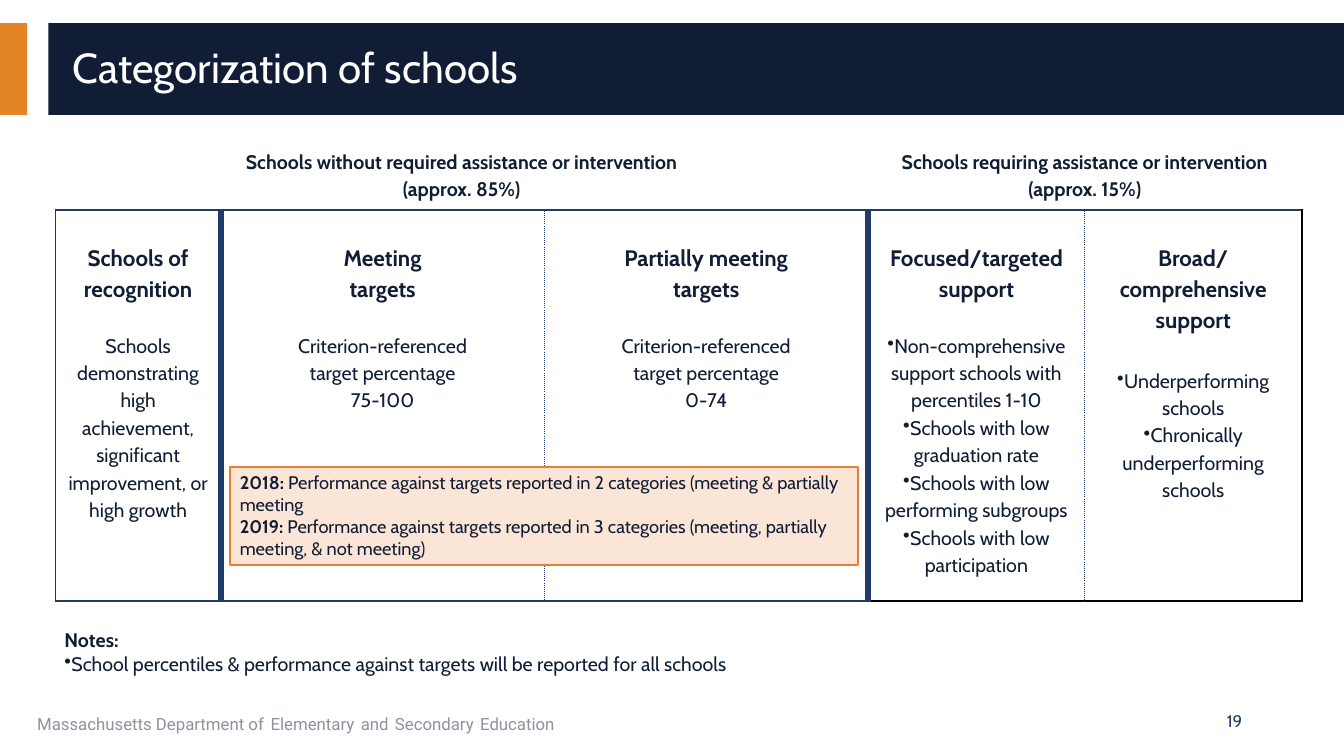
from lxml.etree import SubElement
from pptx import Presentation
from pptx.dml.color import RGBColor
from pptx.enum.shapes import MSO_SHAPE
from pptx.enum.text import MSO_ANCHOR, MSO_AUTO_SIZE, PP_ALIGN
from pptx.oxml.ns import qn
from pptx.util import Inches, Pt

NAVY, BLUE, BLACK = "101D35", "203B6A", "000000"


def write(frame, text, paragraph=None, size=14, bold=False, color=NAVY, font="Cabin",
          align=PP_ALIGN.LEFT, spacing=1.0, before=0, bullet=False):
    """Add text as a new paragraph, or as a further run of the given one."""
    if paragraph is None:
        first = frame.paragraphs[0]
        paragraph = frame.add_paragraph() if first.runs else first
        properties = paragraph._p.get_or_add_pPr()
        if bullet:
            properties.set("marL", "0")
            properties.set("indent", "0")
            SubElement(properties, qn("a:buChar"), char="•")
        paragraph.alignment = align
        paragraph.line_spacing = spacing
        paragraph.space_before = Pt(before)
    run = paragraph.add_run()
    run.text = text
    run.font.name = font
    run.font.size = Pt(size)
    run.font.bold = bold
    run.font.color.rgb = RGBColor.from_string(color)
    return paragraph


def set_border(cell, side, color, width, dash="solid"):
    line = SubElement(cell._tc.get_or_add_tcPr(), qn(f"a:ln{side}"), w=str(Pt(width)))
    fill = SubElement(line, qn("a:solidFill"))
    SubElement(fill, qn("a:srgbClr"), val=color)
    SubElement(line, qn("a:prstDash"), val=dash)


presentation = Presentation()
presentation.slide_width = Inches(13.33)
presentation.slide_height = Inches(7.5)
slide = presentation.slides.add_slide(presentation.slide_layouts[5])
shapes = slide.shapes

# Title band
title = shapes.title
for left, width, color in [(0, 0.27, "E38526"), (0.48, 12.85, NAVY)]:
    band = shapes.add_shape(MSO_SHAPE.RECTANGLE, Inches(left), Inches(0.23),
                            Inches(width), Inches(0.91))
    band.shadow.inherit = False
    band.fill.solid()
    band.fill.fore_color.rgb = RGBColor.from_string(color)
    band.line.fill.background()
    title._element.addprevious(band._element)

title.left, title.top = Inches(0.62), Inches(0.32)
title.width, title.height = Inches(12.44), Inches(0.74)
title.text_frame.auto_size = MSO_AUTO_SIZE.NONE
title.text_frame.vertical_anchor = MSO_ANCHOR.MIDDLE
write(title.text_frame, "Categorization of schools", size=30, color="FFFFFF", spacing=0.9)

# Table of categories
table = shapes.add_table(2, 5, Inches(0.55), Inches(1.38), Inches(12.36), Inches(4.58)).table
table.first_row = False
table.horz_banding = False
for column, width in zip(table.columns, [1.64, 3.21, 3.21, 2.15, 2.15]):
    column.width = Inches(width)
for row, height in zip(table.rows, [0.7, 3.88]):
    row.height = Inches(height)

centred = {"align": PP_ALIGN.CENTER, "spacing": 1.15}
groups = [
    (0, 2, ["Schools without required assistance or intervention", "(approx. 85%)"]),
    (3, 4, ["Schools requiring assistance or intervention (approx. 15%)"]),
]
for first, last, lines in groups:
    table.cell(0, first).merge(table.cell(0, last))
    for line in lines:
        write(table.cell(0, first).text_frame, line, bold=True, **centred)

# Each category: heading lines, gap below the heading, bulleted, detail lines
categories = [
    (["Schools of recognition"], 19.6, False,
     ["Schools demonstrating high achievement, significant improvement, or high growth"]),
    (["Meeting", "targets"], 19.6, False,
     ["Criterion-referenced", "target percentage", "75-100"]),
    (["Partially meeting", "targets"], 19.6, False,
     ["Criterion-referenced", "target percentage", "0-74"]),
    (["Focused/targeted support"], 19.6, True,
     ["Non-comprehensive support schools with percentiles 1-10",
      "Schools with low graduation rate",
      "Schools with low performing subgroups",
      "Schools with low participation"]),
    (["Broad/", "comprehensive support"], 22.4, True,
     ["Underperforming schools", "Chronically underperforming schools"]),
]
thin, thick, dotted = (BLUE, 1.5), (BLUE, 4.5), (BLUE, 1, "dot")
verticals = [thin, thick, dotted, thick, dotted, (BLACK, 1.5)]
for index, (headings, gap, bulleted, details) in enumerate(categories):
    cell = table.cell(1, index)
    for heading in headings:
        write(cell.text_frame, heading, size=16, bold=True, **centred)
    for number, detail in enumerate(details):
        write(cell.text_frame, detail, before=0 if number else gap,
              bullet=bulleted, **centred)
    set_border(cell, "L", *verticals[index])
    set_border(cell, "R", *verticals[index + 1])
    set_border(cell, "T", *thin)
    set_border(cell, "B", BLUE if index < 3 else BLACK, 1.5)
    set_border(table.cell(0, index), "B", *thin)

for row_index, top_margin, anchor in [(0, 0, MSO_ANCHOR.MIDDLE), (1, 0.31, MSO_ANCHOR.TOP)]:
    for cell in table.rows[row_index].cells:
        cell.fill.background()
        cell.vertical_anchor = anchor
        cell.margin_left = cell.margin_right = Inches(0.07)
        cell.margin_top, cell.margin_bottom = Inches(top_margin), 0

# Notes, footer and page number
boxes = []
for left, top, width, height, anchor in [
    (0.54, 6.18, 12.38, 0.57, MSO_ANCHOR.MIDDLE),
    (0.27, 6.95, 8.44, 0.4, MSO_ANCHOR.TOP),
    (9.42, 6.95, 3, 0.4, MSO_ANCHOR.MIDDLE),
]:
    box = shapes.add_textbox(Inches(left), Inches(top), Inches(width), Inches(height))
    box.text_frame.word_wrap = True
    box.text_frame.vertical_anchor = anchor
    boxes.append(box.text_frame)
notes, footer, page_number = boxes

write(notes, "Notes:", bold=True)
write(notes, "School percentiles & performance against targets will be reported for all schools",
      bullet=True)

grey = {"size": 12, "color": "8D92A1", "font": "Roboto"}
department = write(footer, "Massachusetts Department of", **grey)
for word in ["Elementary", "and", "Secondary", "Education"]:
    write(footer, " ", department, size=18, color=BLUE, font="Roboto")
    write(footer, word, department, **grey)

write(page_number, "19", size=12, color=BLUE, align=PP_ALIGN.RIGHT)

# Callout on reporting years
callout = shapes.add_shape(MSO_SHAPE.RECTANGLE, Inches(2.28), Inches(4.63),
                           Inches(6.23), Inches(0.98))
callout.shadow.inherit = False
callout.fill.solid()
callout.fill.fore_color.rgb = RGBColor.from_string("FBE5D6")
callout.line.color.rgb = RGBColor.from_string("ED7D31")
callout.line.width = Pt(1.5)
callout.text_frame.word_wrap = True
callout.text_frame.vertical_anchor = MSO_ANCHOR.TOP
for year, categories_reported in [
    ("2018: ", "2 categories (meeting & partially meeting"),
    ("2019: ", "3 categories (meeting, partially meeting, & not meeting)"),
]:
    paragraph = write(callout.text_frame, year, size=13, bold=True)
    write(callout.text_frame, f"Performance against targets reported in {categories_reported}",
          paragraph, size=13)

presentation.save("out.pptx")
